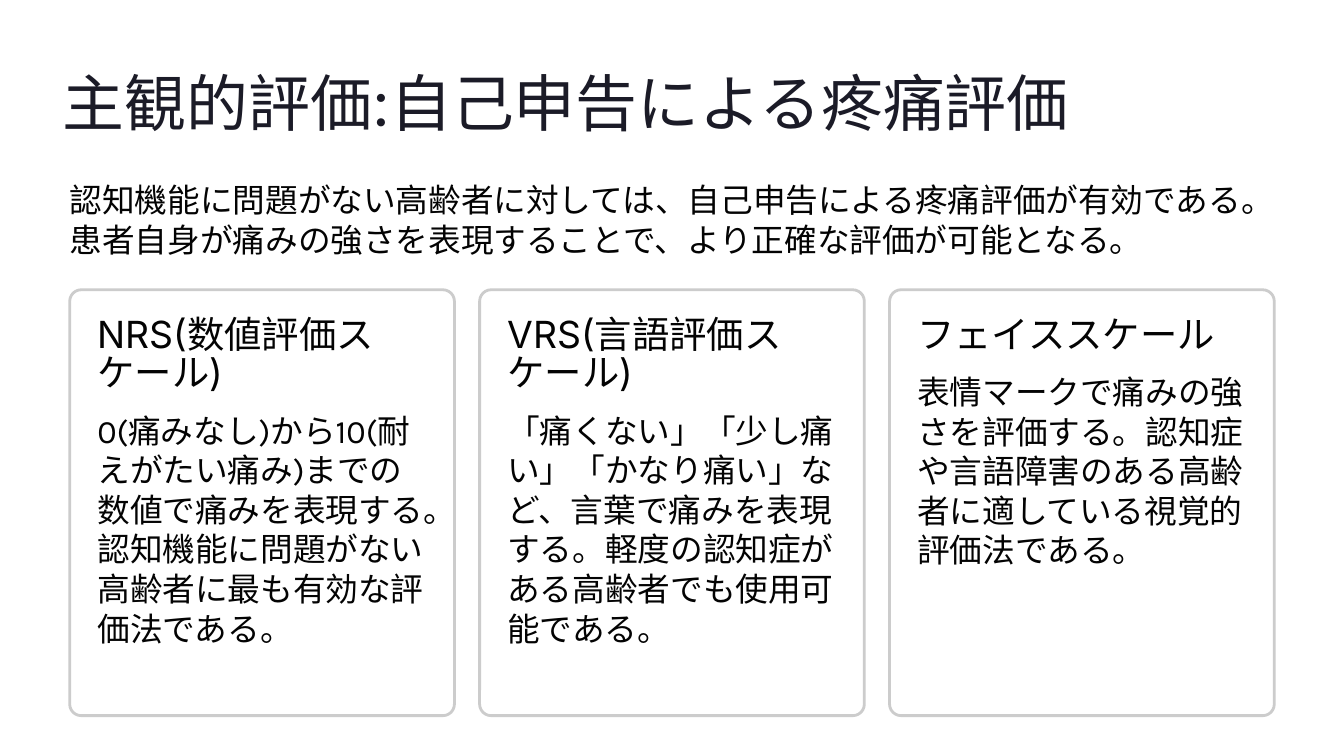
"""Build the slide on self-reported pain assessment and its three scales."""
from dataclasses import dataclass

from lxml import etree
from pptx import Presentation
from pptx import util as u
from pptx.dml.color import RGBColor
from pptx.enum import shapes, text
from pptx.oxml import ns

TITLE_INK = RGBColor(0x1B, 0x1B, 0x27)
BODY_INK = RGBColor(0x03, 0x03, 0x03)
CARD_FILL = RGBColor(0xFF, 0xFF, 0xFF)
CARD_BORDER = RGBColor(0xCC, 0xCC, 0xCC)

CARD_LEFT, CARD_TOP = 0.83, 3.45
CARD_WIDTH, CARD_HEIGHT = 4.58, 5.07
CARD_STEP = 4.88
CARD_PADDING = 0.33
CARD_TEXT_WIDTH = 3.93


@dataclass(frozen=True)
class Style:
    font: str
    size: float
    leading: float
    ink: RGBColor


@dataclass(frozen=True)
class Scale:
    name: str
    description: str
    name_height: float
    description_top: float
    description_height: float


TITLE = Style("Inter", 53, 66.5, TITLE_INK)
HEADING = Style("Inter", 32, 33, BODY_INK)
BODY = Style("Karla", 28, 34, BODY_INK)

SCALES = [
    Scale(
        "NRS(数値評価スケール)",
        "0(痛みなし)から10(耐えがたい痛み)までの数値で痛みを表現する。"
        "認知機能に問題がない高齢者に最も有効な評価法である。",
        1.14, 4.88, 2.91,
    ),
    Scale(
        "VRS(言語評価スケール)",
        "「痛くない」「少し痛い」「かなり痛い」など、言葉で痛みを表現する。"
        "軽度の認知症がある高齢者でも使用可能である。",
        1.14, 4.88, 2.91,
    ),
    Scale(
        "フェイススケール",
        "表情マークで痛みの強さを評価する。"
        "認知症や言語障害のある高齢者に適している視覚的評価法である。",
        0.57, 4.42, 2.33,
    ),
]


def add_text(slide, wording: str, left: float, top: float, width: float,
             height: float, style: Style) -> None:
    """Place one paragraph in a box without margins."""
    box = slide.shapes.add_textbox(*map(u.Inches, (left, top, width, height)))
    frame = box.text_frame
    frame.margin_left = frame.margin_right = 0
    frame.margin_top = frame.margin_bottom = 0
    frame.word_wrap = True
    frame.vertical_anchor = text.MSO_ANCHOR.TOP
    paragraph = frame.paragraphs[0]
    paragraph.text = wording
    paragraph.line_spacing = u.Pt(style.leading)
    paragraph.font.name = style.font
    paragraph.font.size = u.Pt(style.size)
    paragraph.font.color.rgb = style.ink


def add_card(slide, scale: Scale, left: float) -> None:
    """Draw a rounded card with the name and description of a scale."""
    card = slide.shapes.add_shape(
        shapes.MSO_SHAPE.ROUNDED_RECTANGLE,
        *map(u.Inches, (left, CARD_TOP, CARD_WIDTH, CARD_HEIGHT)))
    card.adjustments[0] = 0.03
    card.shadow.inherit = False
    card.fill.solid()
    card.fill.fore_color.rgb = CARD_FILL
    fill_color = card.fill._xPr.find(ns.qn("a:solidFill"))[0]
    etree.SubElement(fill_color, ns.qn("a:alpha"), val="95000")
    card.line.color.rgb = CARD_BORDER
    card.line.width = u.Pt(2.4)

    text_left = left + CARD_PADDING
    add_text(slide, scale.name, text_left, CARD_TOP + CARD_PADDING,
             CARD_TEXT_WIDTH, scale.name_height, HEADING)
    add_text(slide, scale.description, text_left, scale.description_top,
             CARD_TEXT_WIDTH, scale.description_height, BODY)


def main() -> None:
    """Assemble and save the slide."""
    deck = Presentation()
    deck.slide_width, deck.slide_height = u.Inches(16), u.Inches(9)
    slide = deck.slides.add_slide(deck.slide_layouts[6])

    add_text(slide, "主観的評価:自己申告による疼痛評価",
             0.75, 0.73, 12.8, 0.92, TITLE)
    add_text(slide,
             "認知機能に問題がない高齢者に対しては、自己申告による疼痛評価が有効である。"
             "患者自身が痛みの強さを表現することで、より正確な評価が可能となる。",
             CARD_LEFT, 2.14, 14.34, 0.95, BODY)
    for position, scale in enumerate(SCALES):
        add_card(slide, scale, CARD_LEFT + position * CARD_STEP)

    deck.save("out.pptx")


if __name__ == "__main__":
    main()
